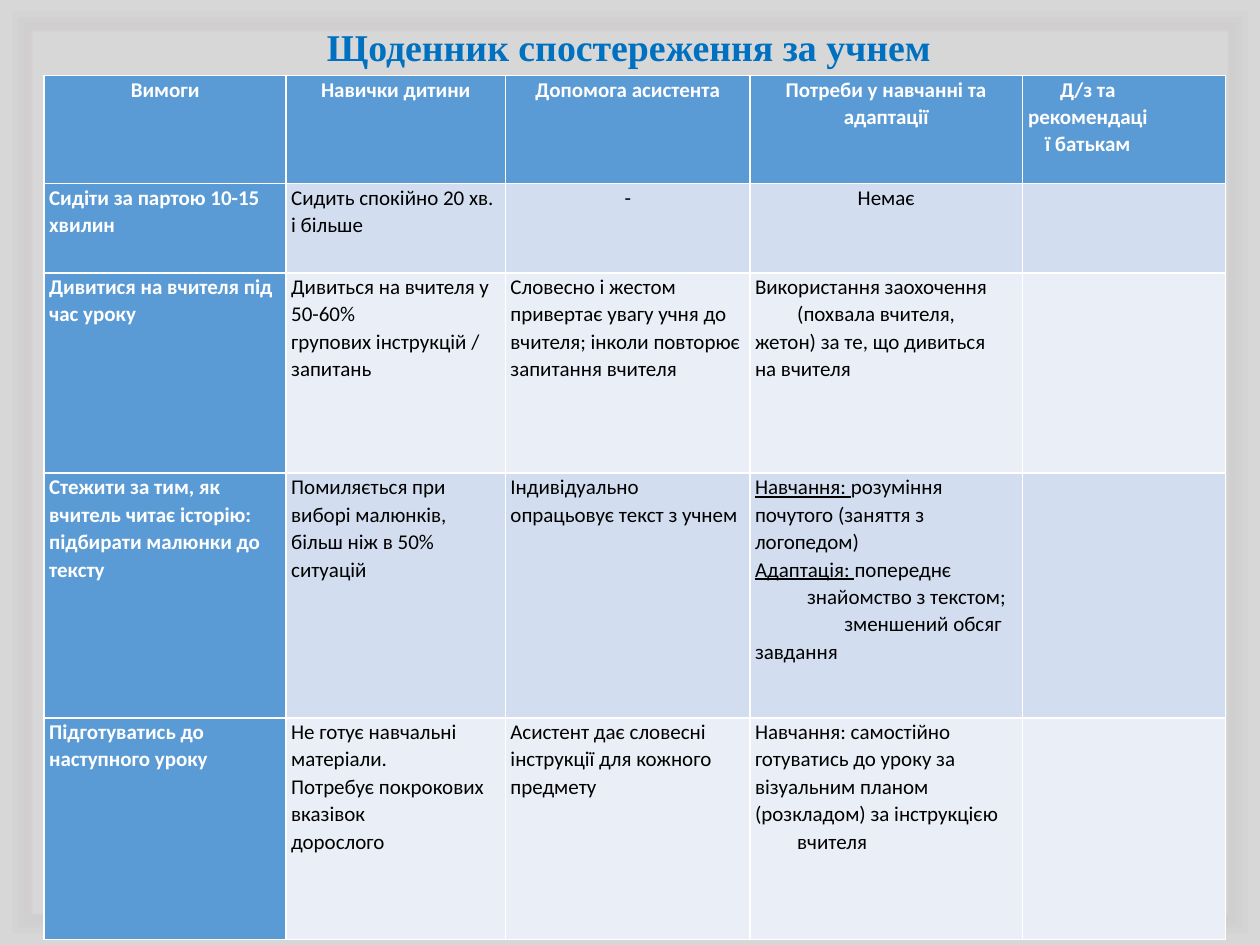
"""Build the pupil observation diary slide."""
from dataclasses import dataclass

import pptx
import pptx.dml.color
import pptx.enum.text
import pptx.oxml
import pptx.oxml.ns
import pptx.util

Cm = pptx.util.Cm
Pt = pptx.util.Pt
ALIGN = pptx.enum.text.PP_ALIGN

HEADER_FILL = "5B9BD5"
BAND_FILLS = ("D2DEEF", "EAEFF7")
COLUMN_WIDTHS = (4.88, 4.42, 4.93, 5.49, 4.09)
ROW_HEIGHTS = (2.18, 1.8, 4.04, 4.93, 4.47)
GRADIENT = ((0, "FFFFFF"), (65, "E4E4E4"), (79, "D7D7D7"),
            (93, "D7D7D7"), (94, "D0CECE"), (99, "D7D7D7"))


@dataclass
class Line:
    """A cell paragraph with an optional underlined label and indents in cm."""
    text: str
    label: str = ""
    indent: float = 0
    right: float = 0
    centred: bool = False


ROWS = (
    (
        [Line("Вимоги")],
        [Line("Навички дитини")],
        [Line("Допомога асистента")],
        [Line("Потреби у навчанні та адаптації")],
        [Line("Д/з та", right=1.45), Line("рекомендації батькам")],
    ),
    (
        [Line("Сидіти за партою 10-15 хвилин")],
        [Line("Сидить спокійно 20 хв. і більше")],
        [Line("-", centred=True)],
        [Line("Немає", centred=True)],
        [],
    ),
    (
        [Line("Дивитися на вчителя під час уроку")],
        [Line("Дивиться на вчителя у 50-60%"), Line("групових інструкцій / запитань")],
        [Line("Словесно і жестом привертає увагу учня до вчителя; "
              "інколи повторює запитання вчителя")],
        [Line("Використання заохочення"),
         Line("(похвала вчителя, жетон) за те, що дивиться\vна вчителя", indent=0.85)],
        [],
    ),
    (
        [Line("Стежити за тим, як вчитель читає історію: підбирати малюнки до тексту")],
        [Line("Помиляється при\vвиборі малюнків,\vбільш ніж в 50% ситуацій")],
        [Line("Індивідуально опрацьовує текст з учнем")],
        [Line("розуміння почутого (заняття з логопедом)", label="Навчання: "),
         Line("попереднє", label="Адаптація: "),
         Line("знайомство з текстом;", indent=1.05),
         Line("зменшений обсяг завдання", indent=1.8)],
        [],
    ),
    (
        [Line("Підготуватись до наступного уроку")],
        [Line("Не готує навчальні матеріали."), Line("Потребує покрокових вказівок"),
         Line("дорослого")],
        [Line("Асистент дає словесні інструкції для кожного предмету")],
        [Line("Навчання: самостійно готуватись до уроку за візуальним планом "
              "(розкладом) за інструкцією"),
         Line("вчителя", indent=0.85)],
        [],
    ),
)


def colour(value):
    """Turn a hex string into a colour."""
    return pptx.dml.color.RGBColor.from_string(value)


def set_font(font, name, size, value, bold):
    """Set the typeface, size, colour and weight of a font."""
    font.name = name
    font.size = Pt(size)
    font.bold = bold
    font.color.rgb = colour(value)


def set_background(page):
    """Give the page a gradient that spreads from its centre."""
    stops = "".join(
        f'<a:gs pos="{position * 1000}"><a:srgbClr val="{value}"/></a:gs>'
        for position, value in GRADIENT
    )
    background = pptx.oxml.parse_xml(
        f'<p:bg {pptx.oxml.ns.nsdecls("p", "a")}><p:bgPr><a:gradFill rotWithShape="1">'
        f'<a:gsLst>{stops}</a:gsLst><a:path path="shape">'
        '<a:fillToRect l="50000" t="50000" r="50000" b="50000"/></a:path>'
        '</a:gradFill><a:effectLst/></p:bgPr></p:bg>'
    )
    page.element.cSld.insert(0, background)


def set_title(page, text):
    """Place and format the title."""
    title = page.shapes.title
    title.left, title.top, title.width, title.height = Cm(1.73), Cm(0.53), Cm(21.9), Cm(1)
    frame = title.text_frame
    frame.text = text
    frame.vertical_anchor = pptx.enum.text.MSO_ANCHOR.BOTTOM
    frame.auto_size = pptx.enum.text.MSO_AUTO_SIZE.NONE
    para = frame.paragraphs[0]
    para.alignment = ALIGN.CENTER
    para.line_spacing = 0.9
    set_font(para.font, "Times New Roman", 21.6, "0070C0", True)


def write_line(para, line, heading, centred):
    """Write one line of a cell into a paragraph."""
    para.text = line.label + line.text if not line.label else ""
    if line.label:
        label = para.add_run()
        label.text = line.label
        label.font.underline = True
        para.add_run().text = line.text
    para.alignment = ALIGN.CENTER if centred or line.centred else ALIGN.LEFT
    para.line_spacing = 1.07
    set_font(para.font, "Calibri", 12, "FFFFFF" if heading else "000000", heading)
    properties = para._p.get_or_add_pPr()
    for name, length in (("indent", line.indent), ("marR", line.right)):
        if length:
            properties.set(name, str(Cm(length)))


def fill_cell(cell, lines, row, column):
    """Fill a cell and write its lines."""
    heading = row == 0 or column == 0
    cell.fill.solid()
    cell.fill.fore_color.rgb = colour(HEADER_FILL if heading else BAND_FILLS[(row - 1) % 2])
    cell.margin_left = cell.margin_right = Cm(0.1)
    cell.margin_top = cell.margin_bottom = 0
    frame = cell.text_frame
    for index, line in enumerate(lines):
        para = frame.add_paragraph() if index else frame.paragraphs[0]
        write_line(para, line, heading, row == 0)


def add_diary(page):
    """Add the diary table."""
    table = page.shapes.add_table(
        len(ROWS), len(COLUMN_WIDTHS), Cm(0.89), Cm(1.52),
        Cm(sum(COLUMN_WIDTHS)), Cm(sum(ROW_HEIGHTS)),
    ).table
    table.first_col = True
    for column, width in zip(table.columns, COLUMN_WIDTHS):
        column.width = Cm(width)
    for row, height in zip(table.rows, ROW_HEIGHTS):
        row.height = Cm(height)
    for row, cells in enumerate(ROWS):
        for column, lines in enumerate(cells):
            fill_cell(table.cell(row, column), lines, row, column)


def main():
    """Build and save the deck."""
    deck = pptx.Presentation()
    deck.slide_width, deck.slide_height = Cm(25.4), Cm(19.05)
    page = deck.slides.add_slide(deck.slide_layouts.get_by_name("Title Only"))
    set_background(page)
    set_title(page, "Щоденник спостереження за учнем")
    add_diary(page)
    deck.save("out.pptx")


if __name__ == "__main__":
    main()
